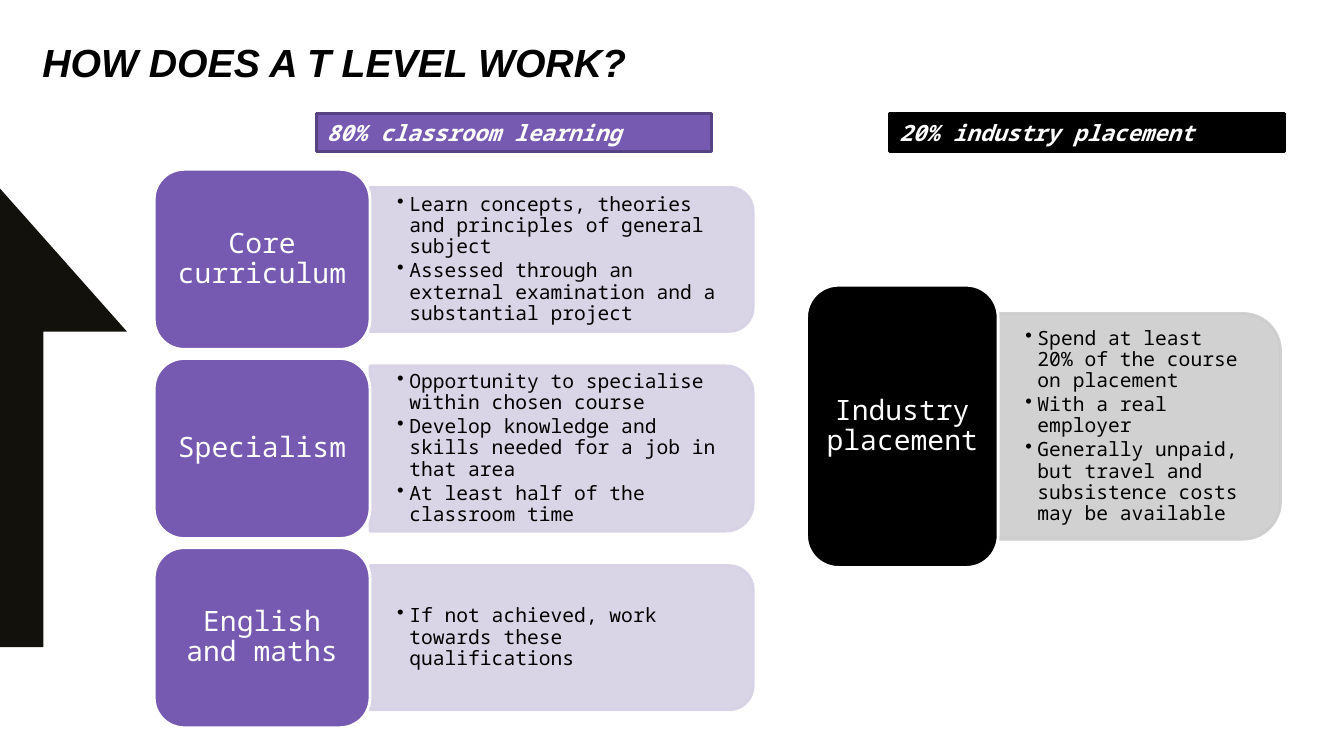
from collections import namedtuple

from lxml.etree import SubElement
from pptx import Presentation
from pptx.dml.color import RGBColor
from pptx.enum.shapes import MSO_SHAPE
from pptx.enum.text import MSO_ANCHOR, MSO_AUTO_SIZE, PP_ALIGN
from pptx.oxml.ns import qn
from pptx.util import Pt

PX = 9144  # 100 px to the inch
BLACK = RGBColor(0x00, 0x00, 0x00)
WHITE = RGBColor(0xFF, 0xFF, 0xFF)
PURPLE = RGBColor(0x76, 0x59, 0xB0)
DARK_PURPLE = RGBColor(0x57, 0x42, 0x82)
LILAC = RGBColor(0xD6, 0xD1, 0xE4)
GREY = RGBColor(0xCC, 0xCC, 0xCC)
ARROW_BLACK = RGBColor(0x12, 0x11, 0x0C)

MONO = "Noto Sans Mono"
TITLE_FONT = {"name": "Arial", "size": Pt(28), "bold": True, "italic": True}
BANNER_FONT = {"name": MONO, "size": Pt(16), "bold": True, "italic": True}
TAB_FONT = {"name": MONO, "size": Pt(20)}
DETAIL_FONT = {"name": MONO, "size": Pt(14)}
BANNER_PARA = {"alignment": PP_ALIGN.LEFT}
TAB_PARA = {"alignment": PP_ALIGN.CENTER, "line_spacing": 0.9}
DETAIL_PARA = {"line_spacing": 0.9, "space_after": Pt(2.1)}

Box = namedtuple("Box", "left top width height")

CLASSROOM_ROWS = [
    ("Core curriculum", 143, [
        "Learn concepts, theories and principles of general subject",
        "Assessed through an external examination and a substantial project"]),
    ("Specialism", 164, [
        "Opportunity to specialise within chosen course",
        "Develop knowledge and skills needed for a job in that area",
        "At least half of the classroom time"]),
    ("English and maths", 143, [
        "If not achieved, work towards these qualifications"]),
]
PLACEMENT_POINTS = [
    "Spend at least 20% of the course on placement",
    "With a real employer",
    "Generally unpaid, but travel and subsistence costs may be available",
]


def emu(box):
    return [round(length * PX) for length in box]


def apply(target, values):
    for name, value in values.items():
        setattr(target, name, value)


def set_frame(frame, anchor, side, end):
    """Wrap the text, anchor it and set its side and top/bottom insets."""
    apply(frame, {"word_wrap": True, "auto_size": MSO_AUTO_SIZE.NONE,
                  "vertical_anchor": anchor,
                  "margin_left": side * PX, "margin_right": side * PX,
                  "margin_top": end * PX, "margin_bottom": end * PX})


def write(para, text, para_format, font_format, color):
    span = para.add_run()
    span.text = text
    apply(para, para_format)
    apply(span.font, font_format)
    span.font.color.rgb = color


def add_filled_shape(slide, kind, box, fill, line):
    shape = slide.shapes.add_shape(kind, *emu(box))
    shape.shadow.inherit = False
    shape.fill.solid()
    shape.fill.fore_color.rgb = fill
    shape.line.color.rgb = line
    shape.line.width = Pt(2)
    return shape


def add_title(slide, box, text):
    title = slide.shapes.title
    title.left, title.top, title.width, title.height = emu(box)
    set_frame(title.text_frame, MSO_ANCHOR.TOP, 0, 0)
    write(title.text_frame.paragraphs[0], text,
          {"alignment": PP_ALIGN.LEFT, "line_spacing": 0.8}, TITLE_FONT, BLACK)


def add_side_arrow(slide, box):
    """Left half of the edge: an upward arrow cut off by the slide border."""
    head, shaft = box.top + 142, box.left + 43
    right, bottom = box.left + box.width, box.top + box.height
    builder = slide.shapes.build_freeform(box.left, box.top, scale=PX)
    builder.add_line_segments([(right, head), (shaft, head),
                               (shaft, bottom), (box.left, bottom)])
    arrow = builder.convert_to_shape()
    arrow.shadow.inherit = False
    arrow.fill.solid()
    arrow.fill.fore_color.rgb = ARROW_BLACK
    arrow.line.fill.background()


def add_banner(slide, box, text, fill, line):
    banner = add_filled_shape(slide, MSO_SHAPE.RECTANGLE, box, fill, line)
    set_frame(banner.text_frame, MSO_ANCHOR.MIDDLE, 10, 0)
    write(banner.text_frame.paragraphs[0], text, BANNER_PARA, BANNER_FONT, WHITE)


def add_panel(slide, box, color):
    """Rectangle rounded on its right side, made by turning a top-rounded one."""
    upright = Box(box.left + (box.width - box.height) / 2,
                  box.top + (box.height - box.width) / 2,
                  box.height, box.width)
    panel = add_filled_shape(slide, MSO_SHAPE.ROUND_2_SAME_RECTANGLE,
                             upright, color, color)
    panel.rotation = 90
    for rgb in panel._element.spPr.iter(qn("a:srgbClr")):
        SubElement(rgb, qn("a:alpha"), val="90000")


def add_points(slide, box, points):
    inset = box.height * 0.05
    text_box = slide.shapes.add_textbox(*emu(Box(
        box.left, box.top + inset, box.width - inset, box.height - 2 * inset)))
    frame = text_box.text_frame
    set_frame(frame, MSO_ANCHOR.MIDDLE, 27, 14)
    for index, point in enumerate(points):
        para = frame.add_paragraph() if index else frame.paragraphs[0]
        properties = para._p.get_or_add_pPr()
        properties.set("marL", str(12 * PX))
        properties.set("indent", str(-12 * PX))
        SubElement(properties, qn("a:buChar"), char="•")
        write(para, point, DETAIL_PARA, DETAIL_FONT, BLACK)


def add_topic(slide, box, tab_width, panel_height, heading, points, colors):
    """A heading tab with a bulleted panel attached to its right side."""
    tab_color, panel_color = colors
    panel_box = Box(box.left + tab_width,
                    box.top + (box.height - panel_height) / 2,
                    box.width - tab_width, panel_height)
    add_panel(slide, panel_box, panel_color)
    add_points(slide, panel_box, points)
    tab = add_filled_shape(slide, MSO_SHAPE.ROUNDED_RECTANGLE,
                           box._replace(width=tab_width), tab_color, WHITE)
    set_frame(tab.text_frame, MSO_ANCHOR.MIDDLE, 8, 4)
    write(tab.text_frame.paragraphs[0], heading, TAB_PARA, TAB_FONT, WHITE)


def add_classroom(slide, box):
    gap = 9
    count = len(CLASSROOM_ROWS)
    row_height = (box.height - gap * (count - 1)) / count
    for index, (heading, panel_height, points) in enumerate(CLASSROOM_ROWS):
        row = Box(box.left, box.top + index * (row_height + gap),
                  box.width, row_height)
        add_topic(slide, row, 214, panel_height, heading, points,
                  (PURPLE, LILAC))


def main():
    deck = Presentation()
    deck.slide_width, deck.slide_height = 1333 * PX, 750 * PX
    slide = deck.slides.add_slide(deck.slide_layouts[5])
    add_side_arrow(slide, Box(0, 187, 126, 455))
    add_title(slide, Box(42, 47, 1070, 55), "HOW DOES A T LEVEL WORK?")
    add_classroom(slide, Box(153, 168, 594, 554))
    add_topic(slide, Box(800, 283, 470, 280), 190, 224, "Industry placement",
              PLACEMENT_POINTS, (BLACK, GREY))
    add_banner(slide, Box(882, 113, 392, 37), "20% industry placement",
               BLACK, BLACK)
    add_banner(slide, Box(314, 113, 392, 37), "80% classroom learning",
               PURPLE, DARK_PURPLE)
    deck.save("out.pptx")


if __name__ == "__main__":
    main()
